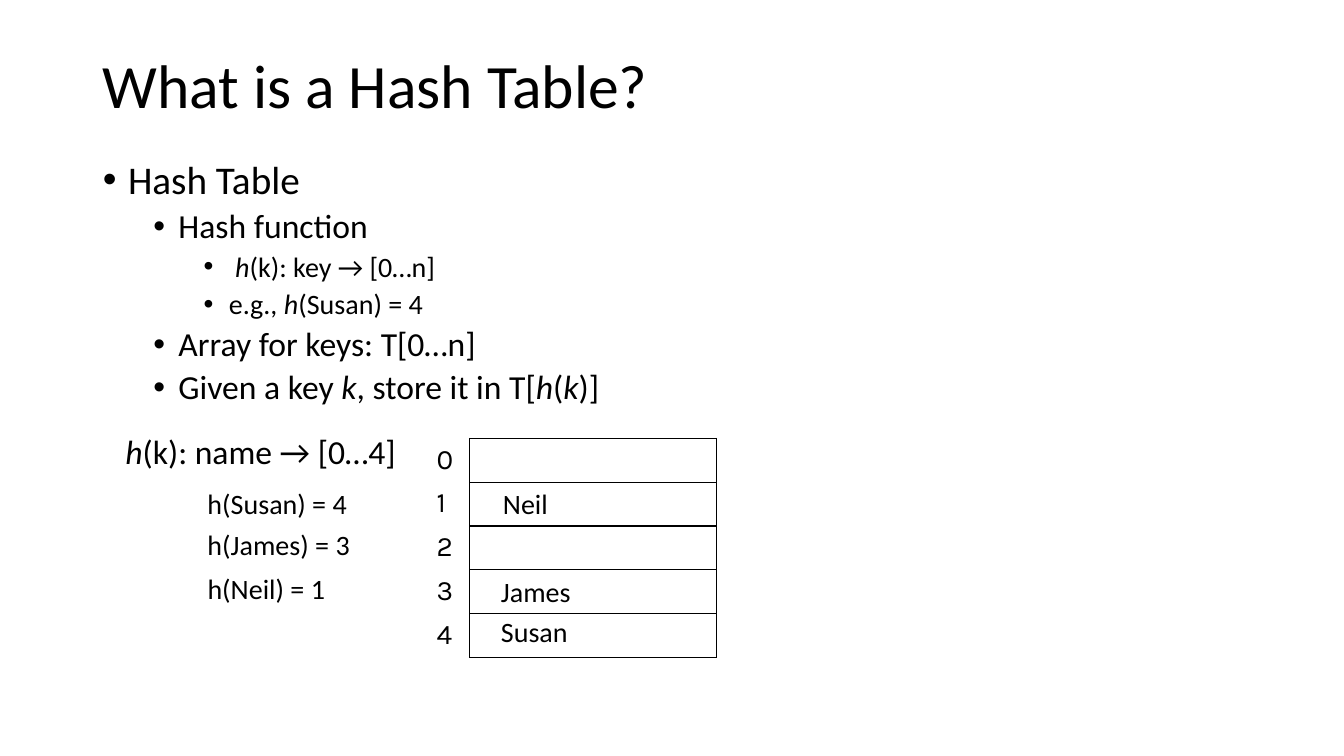
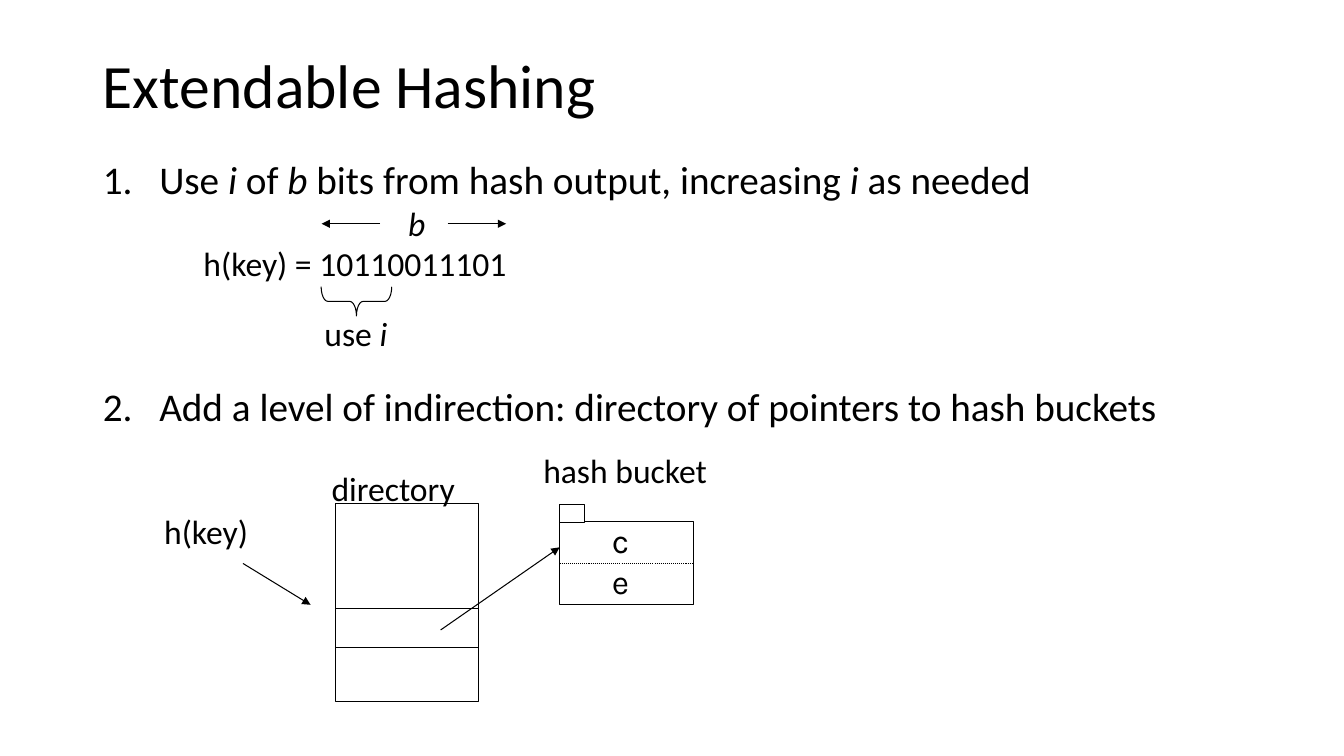
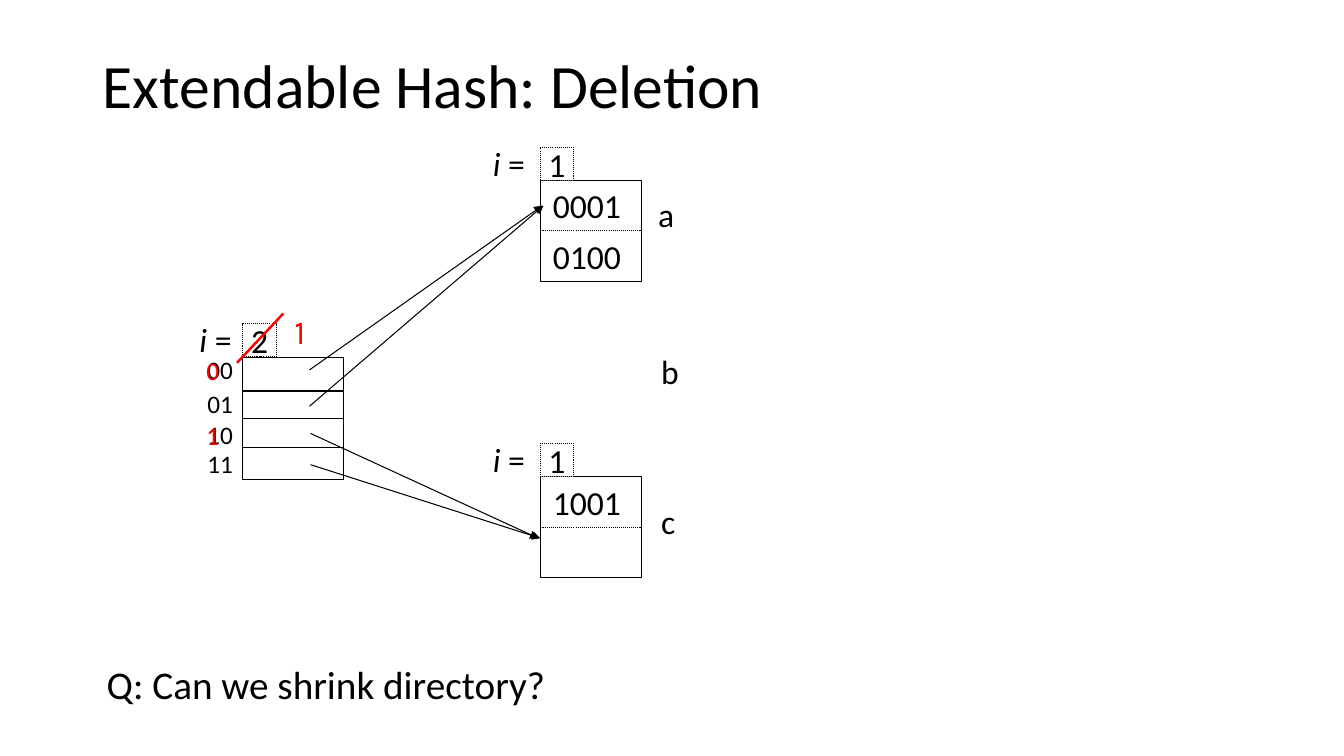
"""Build three slides that explain hash tables and extendable hashing."""
from dataclasses import dataclass

from lxml.etree import SubElement
from pptx import Presentation
from pptx.dml.color import RGBColor
from pptx.enum.dml import MSO_LINE
from pptx.enum.shapes import MSO_CONNECTOR, MSO_SHAPE
from pptx.enum.text import MSO_ANCHOR, MSO_AUTO_SIZE, PP_ALIGN
from pptx.oxml.ns import qn
from pptx.util import Inches, Pt

COLORS = {"ink": "000000", "paper": "FFFFFF", "change": "FF0000"}
MAIN_FONT = "Calibri"
CODE_FONT = "Karla"
TITLE_AREA = (0.92, 0.33, 11.5, 1.09)
BODY_AREA = (0.92, 1.54, 11.5, 5.22)
LEVEL_SIZES = (28, 24, 20)
TITLE_AND_BODY, TITLE_ONLY = 1, 5


@dataclass
class Label:
    text: str
    left: float
    top: float
    width: float
    height: float = 0.5
    size: int = 24
    font: str = MAIN_FONT
    color: str = "ink"
    align: PP_ALIGN = PP_ALIGN.LEFT


@dataclass
class Stroke:
    start: tuple[float, float]
    end: tuple[float, float]
    arrow: bool = False
    dotted: bool = False
    color: str = "ink"
    width: float = 0.75


@dataclass
class Box:
    left: float
    top: float
    width: float
    height: float
    text: str = ""
    dotted: bool = False


@dataclass
class Item:
    text: str
    level: int = 0
    space_before: float = 10


@dataclass
class Bucket:
    top: float
    depth: str
    keys: tuple[str, ...]


def rgb(name: str) -> RGBColor:
    return RGBColor.from_string(COLORS[name])


def write(paragraph, text: str, size: float, font: str = MAIN_FONT, color: str = "ink") -> None:
    """Write text in which asterisks enclose italics."""
    paragraph.font.name = font
    paragraph.font.size = Pt(size)
    paragraph.font.color.rgb = rgb(color)
    for position, part in enumerate(text.split("*")):
        if part:
            run = paragraph.add_run()
            run.text = part
            if position % 2:
                run.font.italic = True


def place(placeholder, area: tuple[float, float, float, float]) -> None:
    placeholder.left, placeholder.top, placeholder.width, placeholder.height = map(Inches, area)
    placeholder.text_frame.auto_size = MSO_AUTO_SIZE.NONE


def add_titled_slide(deck, title: str, layout: int):
    slide = deck.slides.add_slide(deck.slide_layouts[layout])
    heading = slide.shapes.title
    place(heading, TITLE_AREA)
    heading.text_frame.vertical_anchor = MSO_ANCHOR.MIDDLE
    paragraph = heading.text_frame.paragraphs[0]
    paragraph.alignment = PP_ALIGN.LEFT
    paragraph.line_spacing = 0.9
    write(paragraph, title, 44)
    return slide


def fill_body(slide, items: list[Item], numbered: bool = False) -> None:
    body = slide.placeholders[1]
    place(body, BODY_AREA)
    hanging = 0.56 if numbered else 0.25
    for position, item in enumerate(items):
        frame = body.text_frame
        paragraph = frame.add_paragraph() if position else frame.paragraphs[0]
        paragraph.level = item.level
        properties = paragraph._p.get_or_add_pPr()
        properties.set("marL", str(Inches(hanging + 0.5 * item.level)))
        properties.set("indent", str(Inches(-hanging)))
        if numbered:
            SubElement(properties, qn("a:buFont"), typeface="+mj-lt")
            SubElement(properties, qn("a:buAutoNum"), type="arabicPeriod")
        else:
            SubElement(properties, qn("a:buFont"), typeface="Arial")
            SubElement(properties, qn("a:buChar"), char="•")
        paragraph.line_spacing = 0.9
        paragraph.space_before = Pt(item.space_before)
        write(paragraph, item.text, LEVEL_SIZES[item.level])


def add_label(slide, label: Label) -> None:
    area = map(Inches, (label.left, label.top, label.width, label.height))
    frame = slide.shapes.add_textbox(*area).text_frame
    frame.word_wrap = False
    frame.auto_size = MSO_AUTO_SIZE.SHAPE_TO_FIT_TEXT
    paragraph = frame.paragraphs[0]
    paragraph.alignment = label.align
    write(paragraph, label.text, label.size, label.font, label.color)


def add_stroke(slide, stroke: Stroke) -> None:
    ends = map(Inches, (*stroke.start, *stroke.end))
    connector = slide.shapes.add_connector(MSO_CONNECTOR.STRAIGHT, *ends)
    connector.line.color.rgb = rgb(stroke.color)
    connector.line.width = Pt(stroke.width)
    if stroke.dotted:
        connector.line.dash_style = MSO_LINE.ROUND_DOT
    if stroke.arrow:
        SubElement(connector.line._get_or_add_ln(), qn("a:tailEnd"), type="triangle")
    SubElement(connector._element.spPr, qn("a:effectLst"))


def add_box(slide, box: Box) -> None:
    area = map(Inches, (box.left, box.top, box.width, box.height))
    outline = slide.shapes.add_shape(MSO_SHAPE.RECTANGLE, *area)
    outline.shadow.inherit = False
    outline.fill.solid()
    outline.fill.fore_color.rgb = rgb("paper")
    outline.line.color.rgb = rgb("ink")
    outline.line.width = Pt(0.75)
    if box.dotted:
        outline.line.dash_style = MSO_LINE.ROUND_DOT
    if box.text:
        frame = outline.text_frame
        frame.word_wrap = False
        frame.vertical_anchor = MSO_ANCHOR.MIDDLE
        frame.paragraphs[0].alignment = PP_ALIGN.CENTER
        write(frame.paragraphs[0], box.text, 24)


def set_borders(cell, drawn_sides: str) -> None:
    properties = cell._tc.get_or_add_tcPr()
    for side in "LRTB":
        border = SubElement(properties, qn(f"a:ln{side}"), w=str(Pt(1)))
        if side in drawn_sides:
            fill = SubElement(border, qn("a:solidFill"))
            SubElement(fill, qn("a:srgbClr"), val=COLORS["ink"])
        else:
            SubElement(border, qn("a:noFill"))
    cell.fill.background()


def add_slot_table(slide, slots: int) -> None:
    row_height = 2.17 / slots
    area = map(Inches, (4.23, 4.35, 2.88, 2.17))
    table = slide.shapes.add_table(slots, 2, *area).table
    table.first_row = table.horz_banding = False
    for column, width in zip(table.columns, (0.43, 2.45)):
        column.width = Inches(width)
    for slot, row in enumerate(table.rows):
        row.height = Inches(row_height)
        index, key = row.cells
        set_borders(index, "R")
        set_borders(key, "LRTB")
        write(index.text_frame.paragraphs[0], str(slot), 20, CODE_FONT)


def add_bucket(slide, bucket: Bucket) -> None:
    left, top, side = 5.36, bucket.top, 1
    add_box(slide, Box(left, top, side, side))
    add_box(slide, Box(left, top - 0.33, 0.33, 0.33, bucket.depth, dotted=True))
    middle = top + side / 2
    add_stroke(slide, Stroke((left, middle), (left + side, middle), dotted=True))
    add_label(slide, Label("*i* =", 4.79, top - 0.42, 0.52))
    for row, key in enumerate(bucket.keys):
        add_label(slide, Label(key, 5.38, top + row * side / 2, 0.88, align=PP_ALIGN.CENTER))


def build_hash_table(deck) -> None:
    slide = add_titled_slide(deck, "What is a Hash Table?", TITLE_AND_BODY)
    fill_body(slide, [
        Item("Hash Table"),
        Item("Hash function", 1, 5),
        Item(" *h*(k): key → [0…n]", 2, 5),
        Item("e.g., *h*(Susan) = 4", 2, 5),
        Item("Array for keys: T[0…n]", 1, 5),
        Item("Given a key *k*, store it in T[*h*(*k*)]", 1, 5),
    ])
    add_slot_table(slide, 5)
    for label in (
        Label("h(Susan) = 4", 1.96, 4.78, 1.6, 0.44, 20),
        Label("h(James) = 3", 1.96, 5.18, 1.63, 0.44, 20),
        Label("h(Neil) = 1", 1.96, 5.62, 1.38, 0.44, 20),
        Label("Neil", 4.89, 4.78, 0.67, 0.44, 20),
        Label("Susan", 4.87, 6.05, 0.87, 0.44, 20),
        Label("James", 4.87, 5.65, 0.9, 0.44, 20),
        Label(" *h*(k): name → [0…4]", 1.07, 4.23, 3.01),
    ):
        add_label(slide, label)


def build_extendable_hashing(deck) -> None:
    slide = add_titled_slide(deck, "Extendable Hashing", TITLE_AND_BODY)
    fill_body(slide, [
        Item("Use *i* of *b* bits from hash output, increasing *i* as needed"),
        Item("Add a level of indirection: directory of pointers to hash buckets", space_before=132),
    ], numbered=True)
    brace = slide.shapes.add_shape(
        MSO_SHAPE.RIGHT_BRACE, Inches(3.39), Inches(2.64), Inches(0.29), Inches(0.7))
    brace.rotation = 90
    brace.adjustments[0] = 0.23
    brace.shadow.inherit = False
    brace.fill.background()
    brace.line.color.rgb = rgb("ink")
    brace.line.width = Pt(0.75)
    for box in (
        Box(3.33, 5, 1.42, 1.96),
        Box(5.55, 5.17, 1.33, 0.83),
        Box(5.55, 5.01, 0.25, 0.17),
    ):
        add_box(slide, box)
    for stroke in (
        Stroke((3.77, 2.22), (3.19, 2.22), arrow=True),
        Stroke((4.44, 2.22), (5.02, 2.22), arrow=True),
        Stroke((3.33, 6.04), (4.75, 6.04)),
        Stroke((3.33, 6.42), (4.75, 6.42)),
        Stroke((2.41, 5.59), (3.08, 6), arrow=True),
        Stroke((4.37, 6.25), (5.55, 5.43), arrow=True),
        Stroke((5.55, 5.59), (6.88, 5.59), dotted=True),
    ):
        add_stroke(slide, stroke)
    for label in (
        Label("h(key) = 10110011101", 1.92, 2.36, 3.36),
        Label("*b*", 3.95, 1.96, 0.38),
        Label("use *i*", 3.12, 3.06, 0.83),
        Label("c", 5.97, 5.11, 0.36, font=CODE_FONT),
        Label("e", 5.97, 5.52, 0.38, font=CODE_FONT),
        Label("hash bucket", 5.29, 4.41, 1.84),
        Label("directory", 3.19, 4.59, 1.49),
        Label("h(key)", 1.53, 5.02, 1.04),
    ):
        add_label(slide, label)


def build_deletion(deck) -> None:
    slide = add_titled_slide(deck, "Extendable Hash: Deletion", TITLE_ONLY)
    add_box(slide, Box(2.41, 3.55, 1, 1.21))
    add_box(slide, Box(2.41, 3.21, 0.33, 0.33, "2", dotted=True))
    add_label(slide, Label("*i* =", 1.88, 3.11, 0.52))
    for bucket in (Bucket(1.79, "1", ("0001", "0100")), Bucket(4.73, "1", ("1001",))):
        add_bucket(slide, bucket)
    for prefix, top in (("00", 3.47), ("01", 3.8), ("10", 4.11), ("11", 4.4)):
        add_label(slide, Label(prefix, 1.96, top, 0.46, 0.4, 18))
    for divider in (3.88, 4.15, 4.44):
        add_stroke(slide, Stroke((2.41, divider), (3.41, divider), width=1))
    for start, end in (
        ((3.07, 3.67), (5.38, 2.04)),
        ((3.07, 4.03), (5.39, 2.04)),
        ((3.08, 4.3), (5.34, 5.34)),
        ((3.08, 4.61), (5.36, 5.34)),
    ):
        add_stroke(slide, Stroke(start, end, arrow=True))
    for label in (
        Label("Q: Can we shrink directory?", 0.96, 6.5, 4.55, 0.57, 28),
        Label("0", 1.95, 3.48, 0.33, 0.4, 18, color="change"),
        Label("1", 1.95, 4.12, 0.33, 0.4, 18, color="change"),
        Label("a", 6.43, 1.87, 0.38),
        Label("b", 6.46, 3.43, 0.39),
        Label("c", 6.46, 4.92, 0.36),
        Label("1", 2.82, 3.04, 0.38, font=CODE_FONT, color="change"),
    ):
        add_label(slide, label)
    add_stroke(slide, Stroke((2.35, 3.6), (2.81, 3.11), color="change", width=1.75))


def main() -> None:
    deck = Presentation()
    deck.slide_width, deck.slide_height = Inches(13.33), Inches(7.5)
    build_hash_table(deck)
    build_extendable_hashing(deck)
    build_deletion(deck)
    deck.save("out.pptx")


if __name__ == "__main__":
    main()
